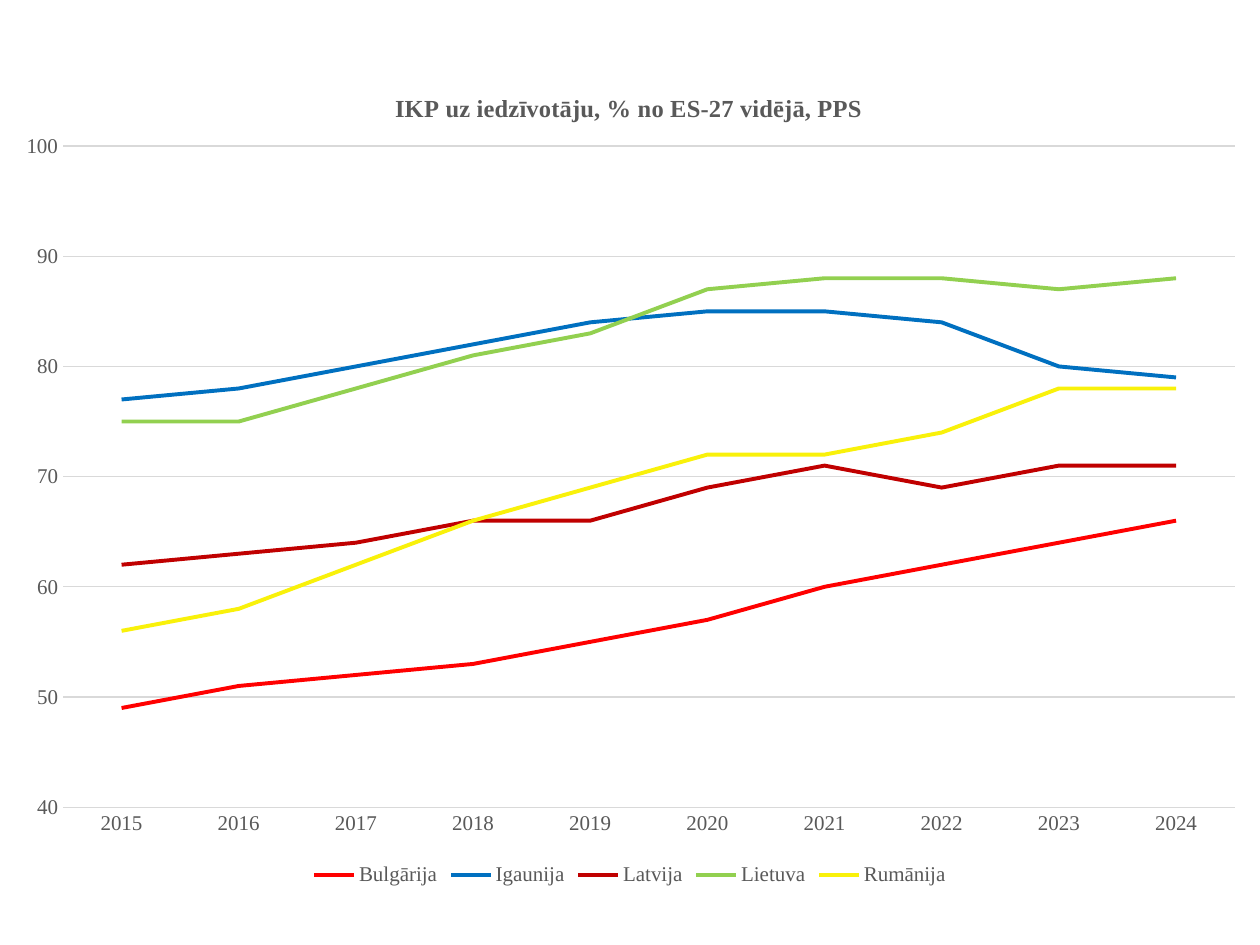
from dataclasses import dataclass

from lxml import etree
from pptx import Presentation
from pptx.chart.data import CategoryChartData
from pptx.dml.color import RGBColor
from pptx.enum.chart import XL_CHART_TYPE, XL_LEGEND_POSITION, XL_TICK_MARK
from pptx.oxml.ns import qn
from pptx.util import Pt

LINE_CHART = XL_CHART_TYPE.LINE
LEGEND_BOTTOM = XL_LEGEND_POSITION.BOTTOM
NO_TICKS = XL_TICK_MARK.NONE
PX = 914400 / 126


@dataclass
class Theme:
    font: str = "Times New Roman"
    text: str = "595959"
    grid: str = "D9D9D9"
    title_size: float = 14
    label_size: float = 12
    grid_width: float = 0.75
    series_width: float = 2.25


theme = Theme()

YEARS = [str(year) for year in range(2015, 2025)]
COUNTRIES = [
    ("Bulgārija", "FF0000", [49, 51, 52, 53, 55, 57, 60, 62, 64, 66]),
    ("Igaunija", "0070C0", [77, 78, 80, 82, 84, 85, 85, 84, 80, 79]),
    ("Latvija", "C00000", [62, 63, 64, 66, 66, 69, 71, 69, 71, 71]),
    ("Lietuva", "92D050", [75, 75, 78, 81, 83, 87, 88, 88, 87, 88]),
    ("Rumānija", "F9F10A", [56, 58, 62, 66, 69, 72, 72, 74, 78, 78]),
]


def px(length):
    return round(length * PX)


def set_layout(parent, index, **values):
    """Place a chart part by fractions of the chart area."""
    for old in parent.findall(qn("c:layout")):
        parent.remove(old)
    layout = etree.Element(qn("c:layout"))
    manual = etree.SubElement(layout, qn("c:manualLayout"))
    for name, value in values.items():
        etree.SubElement(manual, qn(f"c:{name}")).set("val", str(value))
    parent.insert(index, layout)


# Page
deck = Presentation()
deck.slide_width, deck.slide_height = px(1260), px(945)
page = deck.slides.add_slide(deck.slide_layouts[6])

# Chart data
data = CategoryChartData(number_format="0")
data.categories = YEARS
for name, _, values in COUNTRIES:
    data.add_series(name, values)
chart = page.shapes.add_chart(
    LINE_CHART, 0, px(54), px(1260), px(837), data).chart
chart.font.name = theme.font
chart.font.size = Pt(theme.label_size)
chart.font.color.rgb = RGBColor.from_string(theme.text)

# Title
chart.has_title = True
para = chart.chart_title.text_frame.paragraphs[0]
span = para.add_run()
span.text = "IKP uz iedzīvotāju, % no ES-27 vidējā, PPS"
span.font.name = theme.font
span.font.size = Pt(theme.title_size)
span.font.bold = True
span.font.color.rgb = RGBColor.from_string(theme.text)
set_layout(para._p.getparent().getparent().getparent(), 1,
           xMode="edge", yMode="edge", x=0.31, y=0.04)

# Axes and gridlines
years, percent = chart.category_axis, chart.value_axis
for axis in (years, percent):
    axis.major_tick_mark = axis.minor_tick_mark = NO_TICKS
percent.minimum_scale, percent.maximum_scale = 40, 100
percent.major_unit = 10
percent.tick_labels.number_format = "0"
percent.tick_labels.number_format_is_linked = False
percent.format.line.fill.background()
for line in (years.format.line, percent.major_gridlines.format.line):
    line.color.rgb = RGBColor.from_string(theme.grid)
    line.width = Pt(theme.grid_width)
set_layout(chart._chartSpace.chart.plotArea, 0, layoutTarget="inner",
           xMode="edge", yMode="edge", x=0.05, y=0.11, w=0.93, h=0.79)

# Legend
chart.has_legend = True
chart.legend.position = LEGEND_BOTTOM
chart.legend.include_in_layout = False

# Country lines
chart.plots[0].vary_by_categories = False
for series, (_, color, _) in zip(chart.plots[0].series, COUNTRIES):
    series.smooth = False
    series.format.line.color.rgb = RGBColor.from_string(color)
    series.format.line.width = Pt(theme.series_width)

deck.save("out.pptx")
